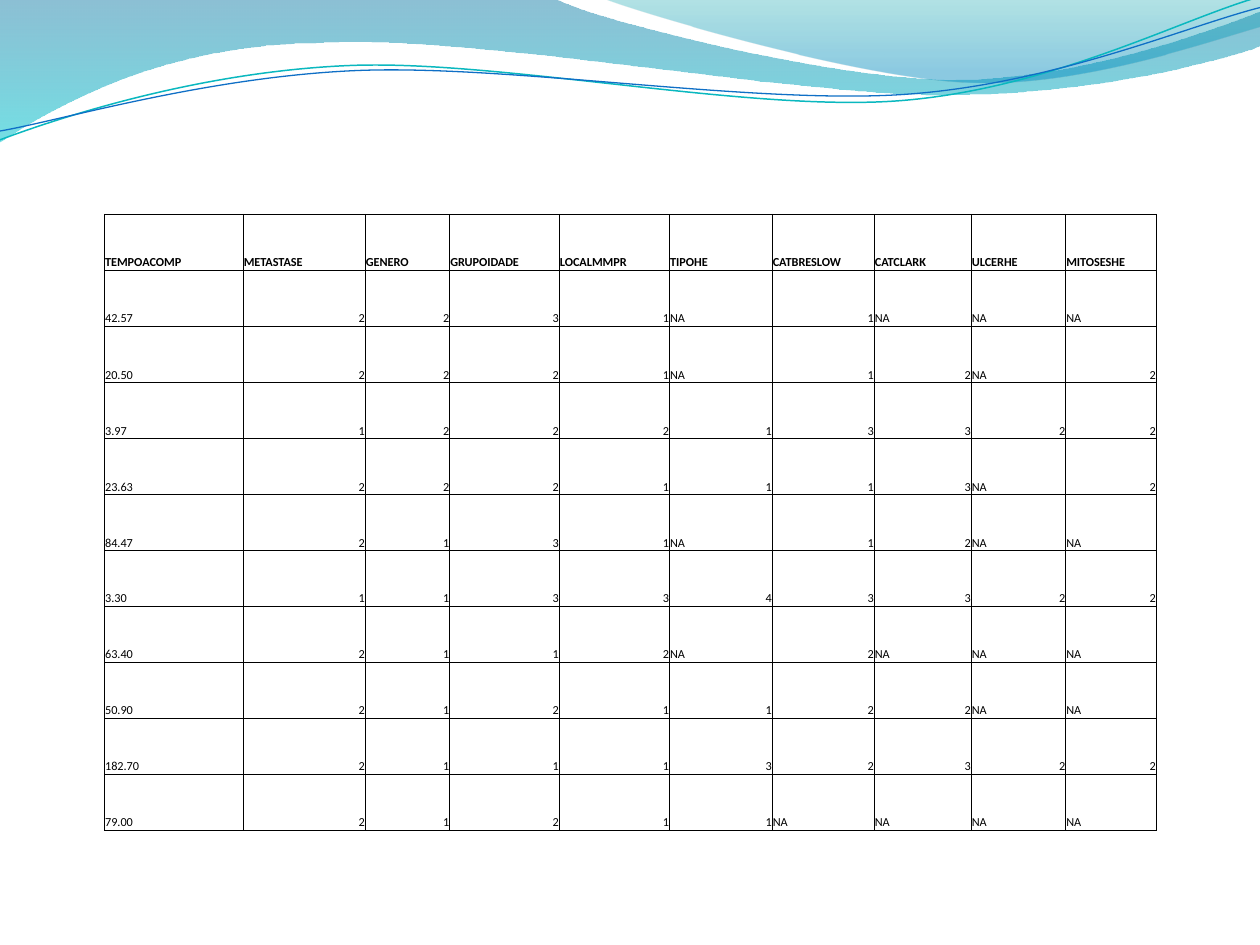
from dataclasses import dataclass
from math import cos, radians, sin

from lxml import etree
from pptx import Presentation, util as u
from pptx.dml.color import RGBColor
from pptx.enum import text
from pptx.oxml import ns

COLUMNS, ROWS = 1000, 750

Point = tuple[float, float]
Segment = tuple[Point, ...]


@dataclass(frozen=True)
class Theme:
    font: str = "Calibri"
    text_size: float = 7
    ink: str = "000000"
    paper: str = "FFFFFF"
    border_width: float = 0.5
    teal_line: str = "0AB8BF"
    blue_line: str = "0F6FC6"


@dataclass(frozen=True)
class Stop:
    position: float
    color: str
    opacity: int


@dataclass(frozen=True)
class Wave:
    start: Point
    segments: list[Segment]
    stops: tuple[Stop, Stop]


@dataclass(frozen=True)
class Strand:
    start: Point
    segments: list[Segment]
    center: Point
    color: str
    width: float
    tilt: float = -2.7


THEME = Theme()

WAVES = [
    Wave(
        (0, -1),
        [((440, -1),),
         ((476, 17), (664, 63), (758, 63)),
         ((853, 63), (958, 26), (1000, 9)),
         ((1001, 36),),
         ((983, 44), (870, 76), (746, 75)),
         ((622, 75), (382, 28), (257, 34)),
         ((129, 35), (46, 83), (-1, 113)),
         ((0, -1),)],
        (Stop(0, "0074A1", 45), Stop(1, "00C6CF", 55)),
    ),
    Wave(
        (479, -1),
        [((509, 11), (682, 62), (769, 65)),
         ((856, 69), (961, 32), (1000, 21)),
         ((1000, 0),),
         ((479, -1),)],
        (Stop(0, "00A1A9", 30), Stop(0.8, "008BBF", 45)),
    ),
]

STRANDS = [
    Strand(
        (0, 111),
        [((48, 93), (158, 57), (277, 52)),
         ((395, 47), (593, 89), (713, 80)),
         ((833, 71), (938, 15), (998, -2))],
        (499, 57.5), THEME.teal_line, 0.85,
    ),
    Strand(
        (0, 104),
        [((47, 96), (164, 61), (283, 56)),
         ((403, 51), (597, 83), (717, 75)),
         ((836, 67), (941, 21), (1000, 6))],
        (499.5, 59), THEME.blue_line, 0.75,
    ),
]

TABLE_LEFT, TABLE_TOP = 83, 170
COLUMN_WIDTHS = [110, 97, 67, 87, 87.5, 81.5, 81, 77, 75, 72]
ROW_HEIGHTS = [44.4] * 2 + [45] + [44.4] * 8
CELL_INSETS = {"margin_left": 0.5, "margin_right": 0.5, "margin_top": 0.5, "margin_bottom": 0}
RECORDS = [line.split() for line in """
TEMPOACOMP METASTASE GENERO GRUPOIDADE LOCALMMPR TIPOHE CATBRESLOW CATCLARK ULCERHE MITOSESHE
42.57 2 2 3 1 NA 1 NA NA NA
20.50 2 2 2 1 NA 1 2 NA 2
3.97 1 2 2 2 1 3 3 2 2
23.63 2 2 2 1 1 1 3 NA 2
84.47 2 1 3 1 NA 1 2 NA NA
3.30 1 1 3 3 4 3 3 2 2
63.40 2 1 1 2 NA 2 NA NA NA
50.90 2 1 2 1 1 2 2 NA NA
182.70 2 1 1 1 3 2 3 2 2
79.00 2 1 2 1 1 NA NA NA NA
""".strip().splitlines()]


def across(deck, columns: float) -> int:
    return round(deck.slide_width * columns / COLUMNS)


def down(deck, rows: float) -> int:
    return round(deck.slide_height * rows / ROWS)


def turn(point: Point, center: Point, degrees: float) -> Point:
    angle = radians(degrees)
    dx, dy = point[0] - center[0], point[1] - center[1]
    return (center[0] + dx * cos(angle) - dy * sin(angle),
            center[1] + dx * sin(angle) + dy * cos(angle))


def add_outline(deck, page, start: Point, segments: list[Segment], *, close: bool):
    knots = [start, *(point for segment in segments for point in segment)]
    places = [(across(deck, x), down(deck, y)) for x, y in knots]
    builder = page.shapes.build_freeform(*places[0])
    builder.add_line_segments(places[1:], close=close)
    shape = builder.convert_to_shape()
    shape.shadow.inherit = False
    steps = iter(list(shape.element.spPr.iter(ns.qn("a:lnTo"))))
    for segment in segments:
        group = [next(steps) for _ in segment]
        if len(group) == 3:
            bend = etree.Element(ns.qn("a:cubicBezTo"))
            group[0].addprevious(bend)
            for step in group:
                bend.append(step[0])
                step.getparent().remove(step)
    return shape


def draw_wave(deck, page, wave: Wave) -> None:
    shape = add_outline(deck, page, wave.start, wave.segments, close=True)
    shape.line.fill.background()
    shape.fill.gradient()
    shape.fill.gradient_angle = 270
    for target, stop in zip(shape.fill.gradient_stops, wave.stops):
        target.position = stop.position
        target.color.rgb = RGBColor.from_string(stop.color)
    for color, stop in zip(shape.element.spPr.iter(ns.qn("a:srgbClr")), wave.stops):
        etree.SubElement(color, ns.qn("a:alpha"), val=str(stop.opacity * 1000))


def draw_strand(deck, page, strand: Strand) -> None:
    def level(point: Point) -> Point:
        return turn(point, strand.center, -strand.tilt)

    segments = [tuple(map(level, segment)) for segment in strand.segments]
    shape = add_outline(deck, page, level(strand.start), segments, close=False)
    shape.fill.background()
    shape.line.color.rgb = RGBColor.from_string(strand.color)
    shape.line.width = u.Pt(strand.width)
    shape.rotation = strand.tilt


def write(frame, words: str, *, bold: bool, align) -> None:
    para = frame.paragraphs[0]
    para.alignment = align
    span = para.add_run()
    span.text = words
    span.font.name = THEME.font
    span.font.size = u.Pt(THEME.text_size)
    span.font.bold = bold
    span.font.color.rgb = RGBColor.from_string(THEME.ink)


def add_borders(cell) -> None:
    properties = cell._tc.get_or_add_tcPr()
    for place, side in enumerate(("lnL", "lnR", "lnT", "lnB")):
        border = etree.Element(ns.qn(f"a:{side}"), w=str(u.Pt(THEME.border_width)))
        fill = etree.SubElement(border, ns.qn("a:solidFill"))
        etree.SubElement(fill, ns.qn("a:srgbClr"), val=THEME.ink)
        properties.insert(place, border)


def draw_table(deck, page, records: list[list[str]]) -> None:
    table = page.shapes.add_table(
        len(records), len(COLUMN_WIDTHS),
        across(deck, TABLE_LEFT), down(deck, TABLE_TOP),
        across(deck, sum(COLUMN_WIDTHS)), down(deck, sum(ROW_HEIGHTS)),
    ).table
    table.horz_banding = False
    for column, width in zip(table.columns, COLUMN_WIDTHS):
        column.width = across(deck, width)
    for row, height in zip(table.rows, ROW_HEIGHTS):
        row.height = down(deck, height)
    for row, record in enumerate(records):
        for column, words in enumerate(record):
            cell = table.cell(row, column)
            cell.vertical_anchor = text.MSO_ANCHOR.BOTTOM
            for side, inset in CELL_INSETS.items():
                setattr(cell, side, across(deck, inset))
            cell.fill.solid()
            cell.fill.fore_color.rgb = RGBColor.from_string(THEME.paper)
            add_borders(cell)
            is_code = row > 0 and column > 0 and words != "NA"
            align = text.PP_ALIGN.RIGHT if is_code else text.PP_ALIGN.LEFT
            write(cell.text_frame, words, bold=row == 0, align=align)


def main() -> None:
    deck = Presentation()
    deck.slide_width, deck.slide_height = u.Inches(10), u.Inches(7.5)
    page = deck.slides.add_slide(deck.slide_layouts[6])
    for wave in WAVES:
        draw_wave(deck, page, wave)
    for strand in STRANDS:
        draw_strand(deck, page, strand)
    draw_table(deck, page, RECORDS)
    deck.save("out.pptx")


if __name__ == "__main__":
    main()
